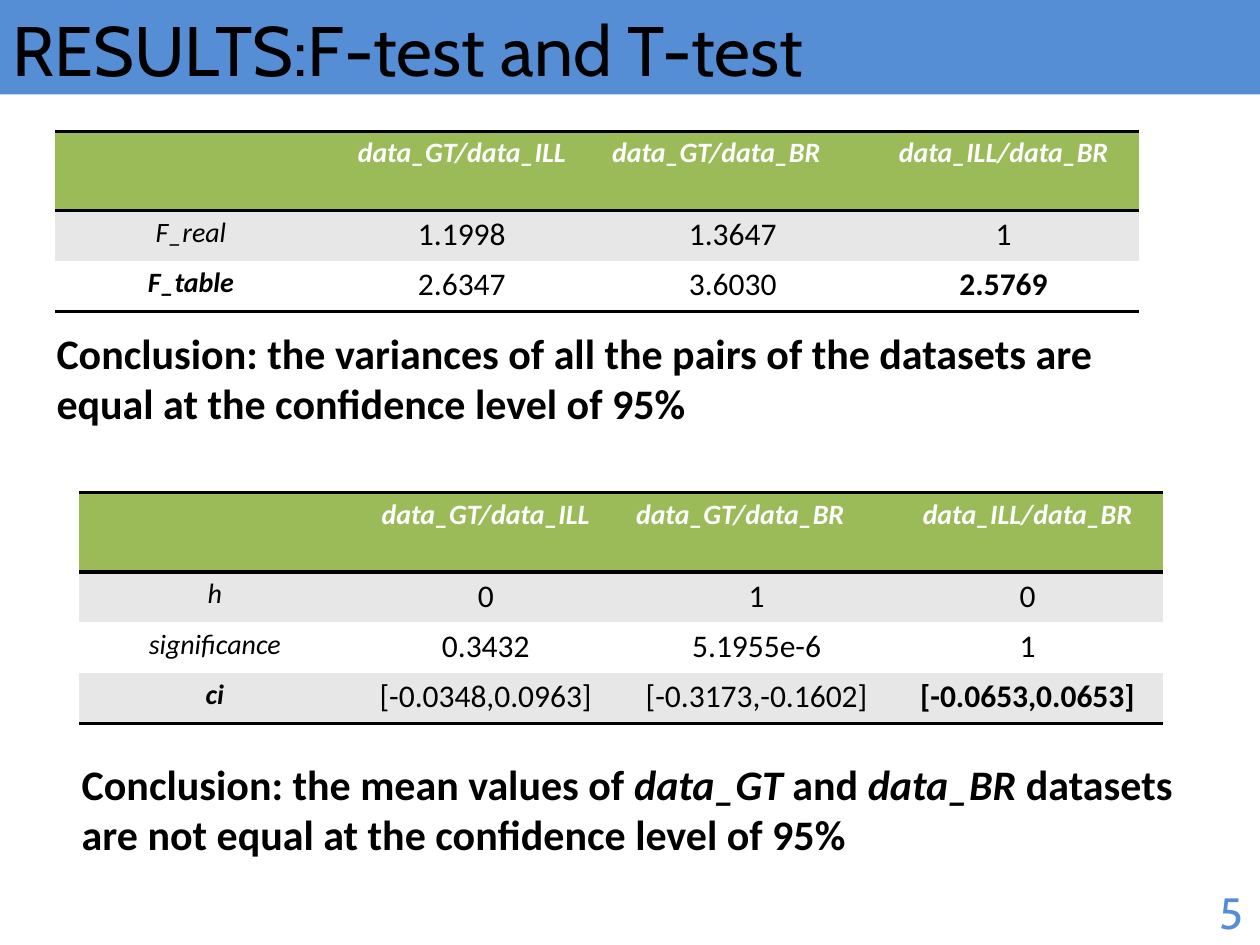
from lxml.etree import SubElement
from pptx import Presentation
from pptx.dml.color import RGBColor
from pptx.enum.shapes import MSO_SHAPE
from pptx.enum.text import MSO_ANCHOR, MSO_AUTO_SIZE, PP_ALIGN
from pptx.oxml.ns import qn
from pptx.util import Inches, Pt

COLORS = {"bar": "558ED5", "header": "9BBB59", "band": "E7E7E7",
          "white": "FFFFFF", "black": "000000"}
COLUMN = Inches(2.15)
HEADER_ROW, DATA_ROW = Inches(0.63), Inches(0.4)
PLAIN_STYLE = "{2D5ABB26-0587-4C30-8999-92F81FD0307C}"
HEADINGS = ["", "data_GT/data_ILL", "data_GT/data_BR", "data_ILL/data_BR"]


def add_span(para, text, size, font="Calibri", color="black", bold=False, italic=False):
    span = para.add_run()
    span.text = text
    span.font.name = font
    span.font.size = Pt(size)
    span.font.bold = bold
    span.font.italic = italic
    span.font.color.rgb = RGBColor.from_string(COLORS[color])


def add_rule(cell, side):
    """Draw a 2 pt black border; side is lnT or lnB, added before the fill."""
    line = SubElement(cell._tc.get_or_add_tcPr(), qn(f"a:{side}"), w=str(Pt(2)))
    fill = SubElement(line, qn("a:solidFill"))
    SubElement(fill, qn("a:srgbClr"), val=COLORS["black"])


deck = Presentation()
deck.slide_width, deck.slide_height = Inches(10), Inches(7.5)
page = deck.slides.add_slide(deck.slide_layouts[5])

# Title on its bar
bar_height = int(deck.slide_height * 0.1)
bar = page.shapes.add_shape(MSO_SHAPE.RECTANGLE, 0, 0, deck.slide_width, bar_height)
bar.shadow.inherit = False
bar.fill.solid()
bar.fill.fore_color.rgb = RGBColor.from_string(COLORS["bar"])
bar.line.fill.background()

title = page.shapes.title
title._element.addprevious(bar._element)
title.left, title.top, title.width, title.height = 0, 0, Inches(7.33), Inches(0.77)
title.text_frame.auto_size = MSO_AUTO_SIZE.NONE
title.text_frame.vertical_anchor = MSO_ANCHOR.TOP
heading = title.text_frame.paragraphs[0]
heading.alignment = PP_ALIGN.LEFT
add_span(heading, "RESULTS:F-test and T-test", 40, font="Cabin")

# Test results
tables = [
    (0.44, 1.04, [["F_real", "1.1998", "1.3647", "1"],
                  ["F_table", "2.6347", "3.6030", "2.5769"]]),
    (0.63, 3.91, [["h", "0", "1", "0"],
                  ["significance", "0.3432", "5.1955e-6", "1"],
                  ["ci", "[-0.0348,0.0963]", "[-0.3173,-0.1602]", "[-0.0653,0.0653]"]]),
]
for left, top, results in tables:
    rows = [HEADINGS] + results
    last = len(results)
    frame = page.shapes.add_table(len(rows), len(HEADINGS), Inches(left), Inches(top),
                                  COLUMN * len(HEADINGS), HEADER_ROW + DATA_ROW * last)
    table = frame.table
    table._tbl.tblPr.find(qn("a:tableStyleId")).text = PLAIN_STYLE
    for column in table.columns:
        column.width = COLUMN
    for r, values in enumerate(rows):
        table.rows[r].height = DATA_ROW if r else HEADER_ROW
        for c, value in enumerate(values):
            cell = table.cell(r, c)
            cell.margin_top = cell.margin_bottom = Inches(0.04)
            if r == 0:
                add_rule(cell, "lnT")
            if r in (0, last):
                add_rule(cell, "lnB")
            cell.fill.solid()
            fill = "header" if r == 0 else "band" if r % 2 else "white"
            cell.fill.fore_color.rgb = RGBColor.from_string(COLORS[fill])
            if r == 0 and c == 2:  # this heading sits left of centre
                cell.margin_left, cell.margin_right = Inches(0.07), Inches(0.33)
            if not value:
                continue
            para = cell.text_frame.paragraphs[0]
            para.alignment = PP_ALIGN.CENTER
            label = r == 0 or c == 0
            add_span(para, value, 16 if label else 18,
                     color="black" if r else "white",
                     bold=r == 0 or (r == last and c in (0, 3)), italic=label)

# Conclusions, as (text, italic) spans
conclusions = [
    (0.35, 2.55, [("Conclusion: the variances of all the pairs of the datasets are "
                   "equal at the confidence level of 95%", False)]),
    (0.55, 5.97, [("Conclusion: the mean values of ", False), ("data_GT", True),
                  (" and ", False), ("data_BR", True),
                  (" datasets are not equal at the confidence level of 95%", False)]),
]
for left, top, spans in conclusions:
    box = page.shapes.add_textbox(Inches(left), Inches(top), Inches(8.92), Inches(0.91))
    box.text_frame.word_wrap = True
    for text, italic in spans:
        add_span(box.text_frame.paragraphs[0], text, 24, bold=True, italic=italic)

# Page number in the lower right corner
width, height = Inches(0.42), Inches(0.52)
number = page.shapes.add_textbox(deck.slide_width - width, deck.slide_height - height,
                                 width, height)
add_span(number.text_frame.paragraphs[0], "5", 25, font="Cabin", color="bar")

deck.save("out.pptx")
